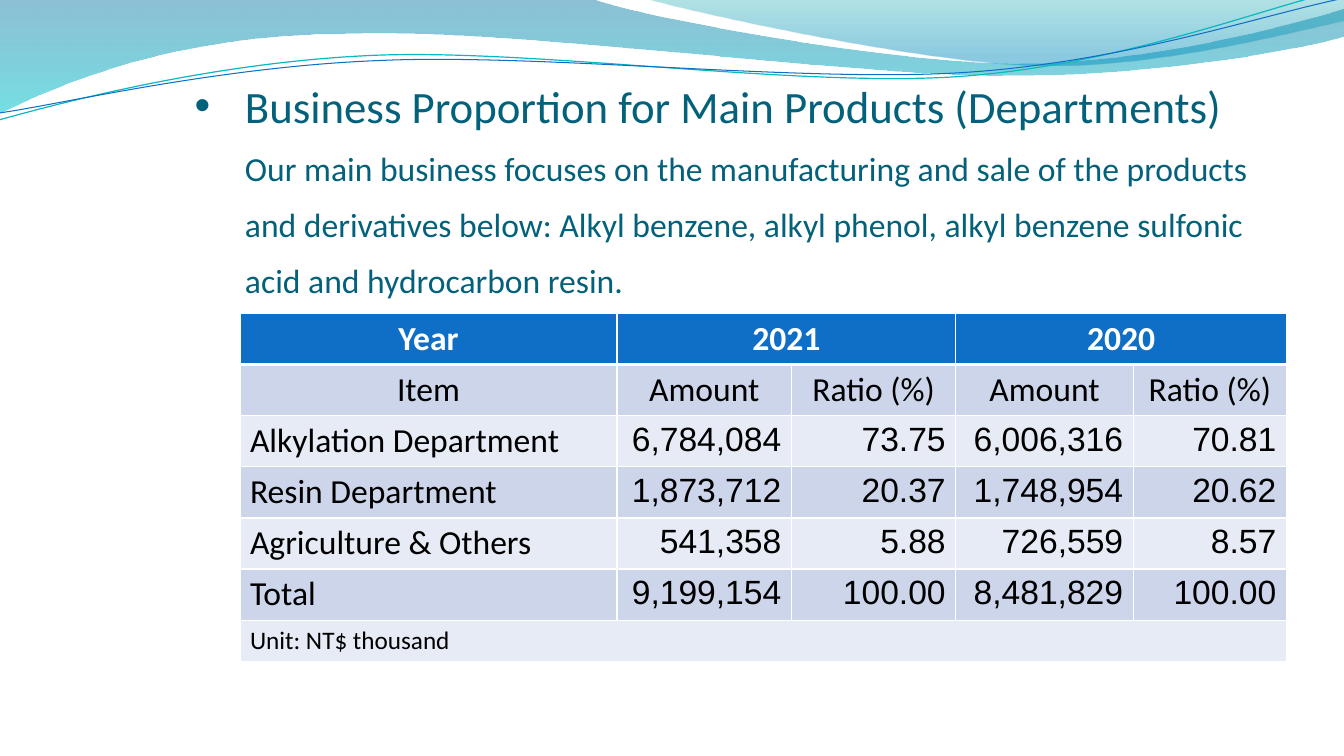
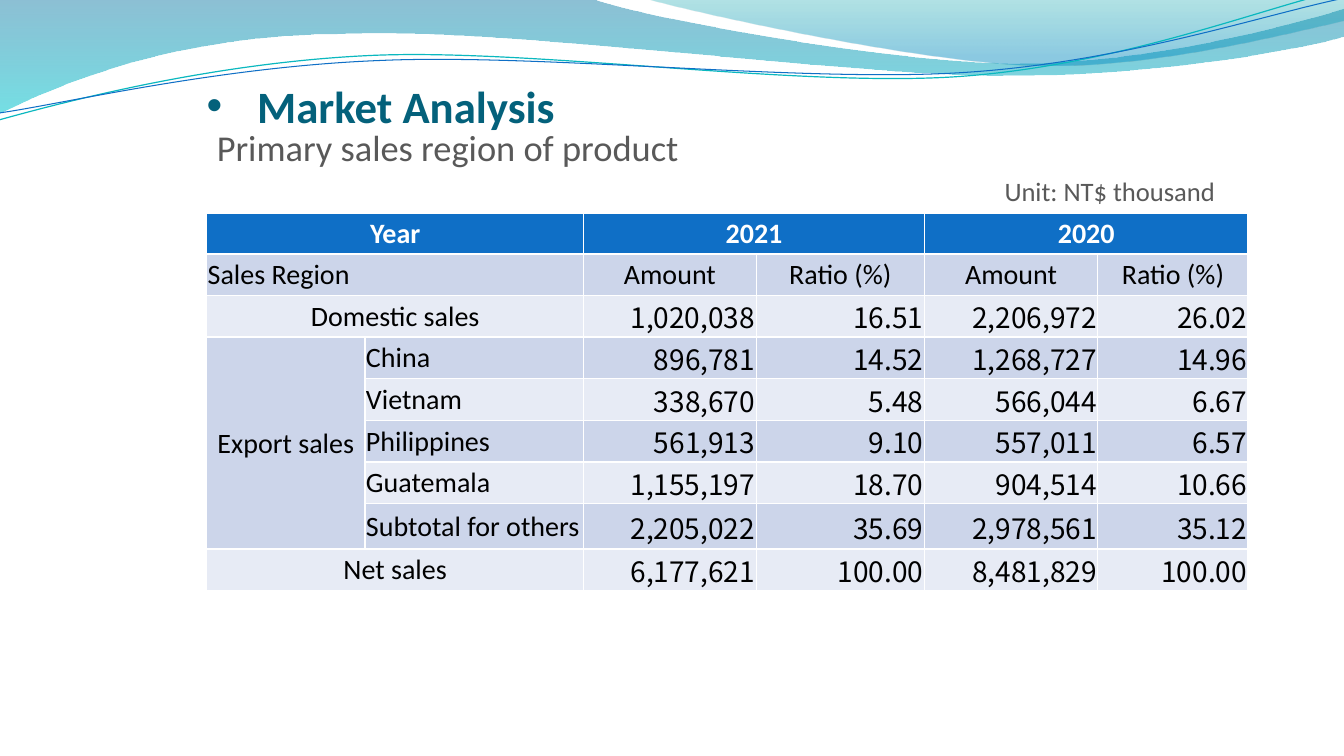
from dataclasses import dataclass
from math import cos, radians, sin

from lxml import etree
from pptx import Presentation
from pptx.dml.color import RGBColor
from pptx.enum.text import MSO_ANCHOR, MSO_AUTO_SIZE, PP_ALIGN
from pptx.oxml.ns import qn
from pptx.util import Inches, Pt


@dataclass(frozen=True)
class Theme:
    heading: str = "04617B"
    muted: str = "595959"
    header: str = "0F6FC6"
    bands: tuple = ("E7EBF5", "CCD5EA")
    white: str = "FFFFFF"
    black: str = "000000"
    font: str = "Calibri"
    title_size: int = 32
    intro_size: int = 24
    subtitle_size: int = 26
    unit_size: int = 19


THEME = Theme()

WAVE_TILT = 2.7
WAVE_FILLS = [
    {
        "start": (0, -0.01),
        "parts": [
            [(5.87, -0.01)],
            [(6.34, 0.17), (8.85, 0.63), (10.11, 0.63)],
            [(11.38, 0.63), (12.78, 0.26), (13.33, 0.09)],
            [(13.35, 0.36)],
            [(13.11, 0.44), (11.6, 0.76), (9.94, 0.75)],
            [(8.29, 0.75), (5.09, 0.28), (3.43, 0.34)],
            [(1.72, 0.35), (0.61, 0.83), (-0.01, 1.13)],
            [(0, -0.01)],
        ],
        "stops": [(0, "0074A1", 45), (1, "00C6CF", 55)],
    },
    {
        "start": (6.39, -0.01),
        "parts": [
            [(6.79, 0.11), (9.09, 0.62), (10.25, 0.65)],
            [(11.41, 0.69), (12.82, 0.32), (13.33, 0.21)],
            [(13.33, 0)],
            [(6.39, -0.01)],
        ],
        "stops": [(0, "00A1A9", 30), (0.8, "008BBF", 45)],
    },
]
WAVE_LINES = [
    {
        "start": (-0.01, 1.19),
        "parts": [
            [(0.64, 1.01), (2.11, 0.62), (3.69, 0.55)],
            [(5.27, 0.48), (7.9, 0.87), (9.5, 0.76)],
            [(11.1, 0.65), (12.52, 0.08), (13.31, -0.1)],
        ],
        "line": ("0AB8BF", 0.85),
        "centre": (6.65, 0.58),
    },
    {
        "start": (0, 1.12),
        "parts": [
            [(0.63, 1.03), (2.18, 0.66), (3.78, 0.6)],
            [(5.37, 0.53), (7.96, 0.82), (9.55, 0.72)],
            [(11.15, 0.62), (12.55, 0.14), (13.34, -0.02)],
        ],
        "line": ("0F6FC6", 0.75),
        "centre": (6.67, 0.59),
    },
]

PRODUCTS_TITLE = "Business Proportion for Main Products (Departments)"
PRODUCTS_INTRO = (
    "Our main business focuses on the manufacturing and sale of the products "
    "and derivatives below: Alkyl benzene, alkyl phenol, alkyl benzene sulfonic "
    "acid and hydrocarbon resin."
)
PRODUCTS_TABLE = {
    "at": (2.38, 3.11),
    "columns": [3.74, 1.73, 1.63, 1.76, 1.52],
    "heights": [0.5] * 6 + [0.41],
    "rows": [
        ["Year", "2021", "", "2020", ""],
        ["Item", "Amount", "Ratio (%)", "Amount", "Ratio (%)"],
        ["Alkylation Department", "6,784,084", "73.75", "6,006,316", "70.81"],
        ["Resin Department", "1,873,712", "20.37", "1,748,954", "20.62"],
        ["Agriculture & Others", "541,358", "5.88", "726,559", "8.57"],
        ["Total", "9,199,154", "100.00", "8,481,829", "100.00"],
        ["Unit: NT$ thousand", "", "", "", ""],
    ],
    "merges": [(0, 1, 0, 2), (0, 3, 0, 4), (6, 0, 6, 4)],
    "label_columns": 1,
    "centred": {"Year", "Item"},
    "size": 24,
    "small": {"Unit: NT$ thousand": 18},
    "number_font": "Arial",
    "margins": (0.1, 0.05, 0.1, 0.05),
    "anchor": MSO_ANCHOR.TOP,
    "header_rule": 3,
}

MARKET_TITLE = "Market Analysis"
MARKET_SUBTITLE = "Primary sales region of product"
MARKET_UNIT = "Unit: NT$ thousand"
MARKET_TABLE = {
    "at": (2.05, 2.12),
    "columns": [1.57, 2.17, 1.71, 1.67, 1.72, 1.49],
    "heights": [0.4, 0.41] + [0.4] * 5 + [0.45, 0.4],
    "rows": [
        ["Year", "", "2021", "", "2020", ""],
        ["Sales Region", "", "Amount", "Ratio (%)", "Amount", "Ratio (%)"],
        ["Domestic sales", "", "1,020,038", "16.51", "2,206,972", "26.02"],
        ["Export sales", "China", "896,781", "14.52", "1,268,727", "14.96"],
        ["", "Vietnam", "338,670", "5.48", "566,044", "6.67"],
        ["", "Philippines", "561,913", "9.10", "557,011", "6.57"],
        ["", "Guatemala", "1,155,197", "18.70", "904,514", "10.66"],
        ["", "Subtotal for others", "2,205,022", "35.69", "2,978,561", "35.12"],
        ["Net sales", "", "6,177,621", "100.00", "8,481,829", "100.00"],
    ],
    "merges": [(0, 0, 0, 1), (0, 2, 0, 3), (0, 4, 0, 5), (1, 0, 1, 1),
               (2, 0, 2, 1), (3, 0, 7, 0), (8, 0, 8, 1)],
    "label_columns": 2,
    "centred": {"Year", "Domestic sales", "Export sales", "Net sales"},
    "size": 20,
    "small": {},
    "number_font": "Noto Sans CJK SC",
    "margins": (0.01, 0.01, 0.01, 0),
    "anchor": MSO_ANCHOR.MIDDLE,
    "header_rule": 1.5,
}


def style_font(font, size, color, name=THEME.font, bold=False):
    font.size = Pt(size)
    font.name = name
    font.bold = bold
    font.color.rgb = RGBColor.from_string(color)


def place(shape, left, top, width, height):
    shape.left, shape.top = Inches(left), Inches(top)
    shape.width, shape.height = Inches(width), Inches(height)


def set_bullet(paragraph, character=None, indent=0):
    properties = paragraph._p.get_or_add_pPr()
    properties.set("marL", str(Inches(indent)))
    properties.set("indent", str(-Inches(indent)))
    if character:
        etree.SubElement(properties, qn("a:buFont"), typeface="Arial")
        etree.SubElement(properties, qn("a:buChar"), char=character)
    else:
        etree.SubElement(properties, qn("a:buNone"))


def level(point, centre):
    angle = radians(WAVE_TILT)
    x, y = point[0] - centre[0], point[1] - centre[1]
    return (centre[0] + x * cos(angle) - y * sin(angle),
            centre[1] + x * sin(angle) + y * cos(angle))


def bend(shape, parts):
    segments = iter(list(shape._element.spPr.iter(qn("a:lnTo"))))
    for part in parts:
        first, *others = [next(segments) for _ in part]
        if others:
            first.tag = qn("a:cubicBezTo")
            for segment in others:
                first.append(segment[0])
                segment.getparent().remove(segment)


def add_wave(slide, wave):
    points = [wave["start"]] + [point for part in wave["parts"] for point in part]
    if "centre" in wave:
        points = [level(point, wave["centre"]) for point in points]
    points = [(Inches(x), Inches(y)) for x, y in points]
    builder = slide.shapes.build_freeform(*points[0], scale=1.0)
    builder.add_line_segments(points[1:], close="stops" in wave)
    shape = builder.convert_to_shape()
    bend(shape, wave["parts"])
    shape.shadow.inherit = False
    if "line" in wave:
        color, width = wave["line"]
        shape.rotation = 360 - WAVE_TILT
        shape.fill.background()
        shape.line.color.rgb = RGBColor.from_string(color)
        shape.line.width = Pt(width)
        return shape
    shape.line.fill.background()
    shape.fill.gradient()
    shape.fill.gradient_angle = 270
    for stop, (position, color, _) in zip(shape.fill.gradient_stops, wave["stops"]):
        stop.position = position
        stop.color.rgb = RGBColor.from_string(color)
    colors = shape._element.spPr.iter(qn("a:srgbClr"))
    for element, (_, _, opacity) in zip(colors, wave["stops"]):
        etree.SubElement(element, qn("a:alpha"), val=str(opacity * 1000))
    return shape


def add_waves_to_master(presentation, slide):
    tree = presentation.slide_master.shapes._spTree
    for index, wave in enumerate(WAVE_FILLS + WAVE_LINES):
        tree.insert(2 + index, add_wave(slide, wave)._element)


def set_title(slide, text, box, bold=False):
    title = slide.shapes.title
    place(title, *box)
    frame = title.text_frame
    frame.text = text
    frame.word_wrap = True
    frame.auto_size = MSO_AUTO_SIZE.NONE
    frame.vertical_anchor = MSO_ANCHOR.MIDDLE
    frame.margin_left = frame.margin_right = frame.margin_bottom = 0
    frame.margin_top = Inches(0.05)
    paragraph = frame.paragraphs[0]
    set_bullet(paragraph, "•", 0.5)
    paragraph.alignment = PP_ALIGN.LEFT
    for run in paragraph.runs:
        style_font(run.font, THEME.title_size, THEME.heading, bold=bold)
    return paragraph


def set_borders(cell, widths):
    properties = cell._tc.get_or_add_tcPr()
    for side, width in zip("LRTB", widths):
        line = etree.SubElement(properties, qn(f"a:ln{side}"), w=str(Pt(width)))
        fill = etree.SubElement(line, qn("a:solidFill"))
        etree.SubElement(fill, qn("a:srgbClr"), val=THEME.white)


def format_cell(cell, text, row, column, data):
    is_label = column < data["label_columns"]
    rule = data["header_rule"]
    set_borders(cell, (1, 1, rule if row == 1 else 1, rule if row == 0 else 1))
    cell.fill.solid()
    cell.fill.fore_color.rgb = RGBColor.from_string(
        THEME.bands[row % 2] if row else THEME.header)
    cell.vertical_anchor = data["anchor"]
    cell.margin_left, cell.margin_top, cell.margin_right, cell.margin_bottom = map(
        Inches, data["margins"])
    cell.text_frame.text = text
    paragraph = cell.text_frame.paragraphs[0]
    if text in data["centred"] or (row < 2 and not is_label):
        paragraph.alignment = PP_ALIGN.CENTER
    else:
        paragraph.alignment = PP_ALIGN.LEFT if is_label else PP_ALIGN.RIGHT
    for run in paragraph.runs:
        style_font(run.font, data["small"].get(text, data["size"]),
                   THEME.black if row else THEME.white,
                   THEME.font if is_label or row < 2 else data["number_font"],
                   bold=row == 0)


def add_sales_table(slide, data):
    rows, columns, heights = data["rows"], data["columns"], data["heights"]
    left, top = data["at"]
    table = slide.shapes.add_table(
        len(rows), len(columns), Inches(left), Inches(top),
        Inches(sum(columns)), Inches(sum(heights))).table
    for column, width in zip(table.columns, columns):
        column.width = Inches(width)
    for row, height in zip(table.rows, heights):
        row.height = Inches(height)
    for row, values in enumerate(rows):
        for column, text in enumerate(values):
            format_cell(table.cell(row, column), text, row, column, data)
    for top_row, first, bottom_row, last in data["merges"]:
        table.cell(top_row, first).merge(table.cell(bottom_row, last))


def build_products(slide):
    paragraph = set_title(slide, f"{PRODUCTS_TITLE}\v{PRODUCTS_INTRO}",
                          (1.93, 0.17, 10.65, 3.34))
    paragraph.line_spacing = Pt(40)
    paragraph.runs[1].font.size = Pt(THEME.intro_size)
    add_sales_table(slide, PRODUCTS_TABLE)


def build_market(slide):
    set_title(slide, MARKET_TITLE, (2.05, 0.58, 10.02, 0.88), bold=True)
    body = slide.placeholders[1]
    place(body, 2.05, 1.17, 10.1, 0.95)
    frame = body.text_frame
    frame.text = f"{MARKET_SUBTITLE}\n{MARKET_UNIT}"
    frame.word_wrap = True
    frame.auto_size = MSO_AUTO_SIZE.NONE
    frame.vertical_anchor = MSO_ANCHOR.MIDDLE
    styles = [(THEME.subtitle_size, PP_ALIGN.LEFT, 0), (THEME.unit_size, PP_ALIGN.RIGHT, 4)]
    for paragraph, (size, alignment, gap) in zip(frame.paragraphs, styles):
        set_bullet(paragraph)
        paragraph.alignment = alignment
        paragraph.space_before = Pt(gap)
        style_font(paragraph.runs[0].font, size, THEME.muted)
    add_sales_table(slide, MARKET_TABLE)


def main():
    presentation = Presentation()
    presentation.slide_width, presentation.slide_height = Inches(13.33), Inches(7.5)
    layouts = presentation.slide_layouts
    products = presentation.slides.add_slide(layouts.get_by_name("Title Only"))
    market = presentation.slides.add_slide(layouts.get_by_name("Title and Content"))
    add_waves_to_master(presentation, products)
    build_products(products)
    build_market(market)
    presentation.save("out.pptx")


if __name__ == "__main__":
    main()
